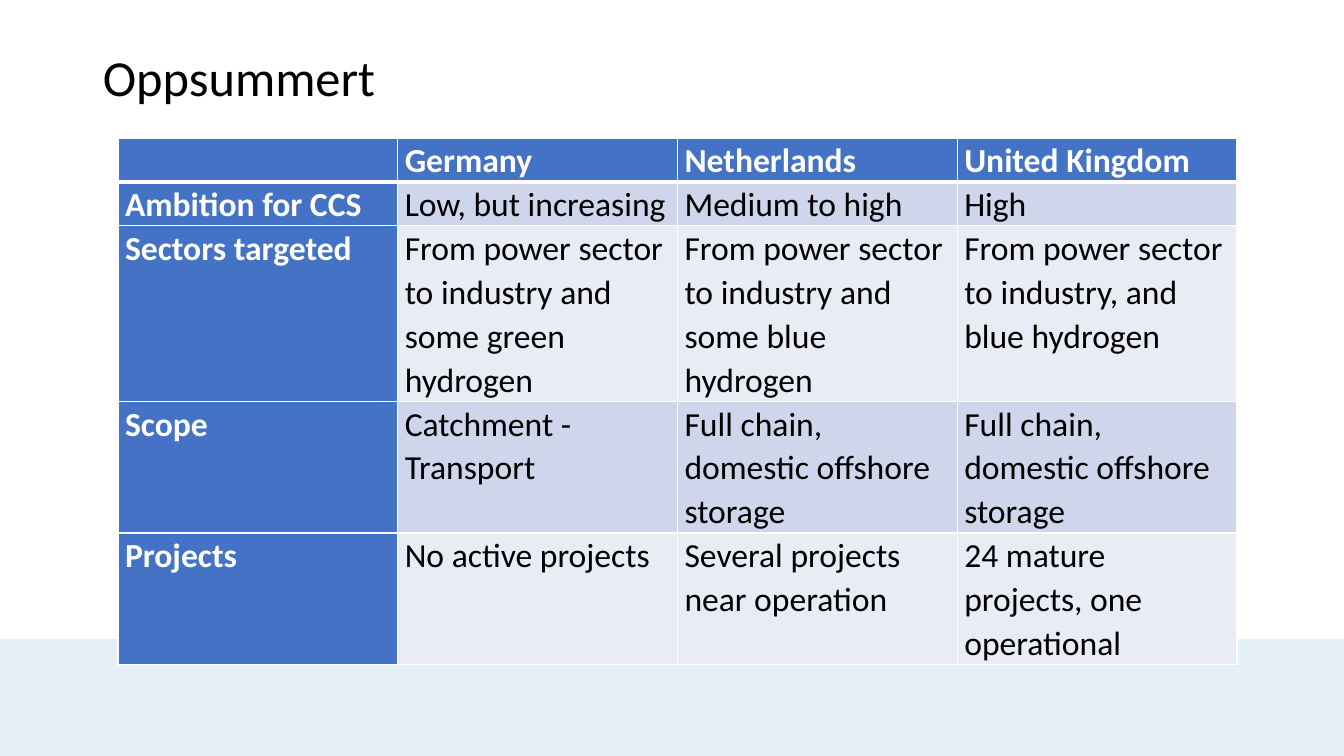
from dataclasses import dataclass

from lxml.etree import SubElement
from pptx import Presentation
from pptx.dml.color import RGBColor
from pptx.enum.shapes import MSO_SHAPE
from pptx.enum.text import MSO_ANCHOR, PP_ALIGN
from pptx.oxml.ns import qn
from pptx.util import Inches, Pt


@dataclass(frozen=True)
class Theme:
    font: str = "Calibri"
    title_size: int = 36
    table_size: int = 24
    text: str = "000000"
    white: str = "FFFFFF"
    heading: str = "4472C4"
    bands: tuple = ("E9EBF5", "CFD5EA")
    footer: str = "E6F1F7"
    thin_rule: int = 1
    header_rule: int = 3


SUMMARY = [
    ["", "Germany", "Netherlands", "United Kingdom"],
    ["Ambition for CCS", "Low, but increasing", "Medium to high", "High"],
    ["Sectors targeted",
     "From power sector to industry and some green hydrogen",
     "From power sector to industry and some blue hydrogen",
     "From power sector to industry, and blue hydrogen"],
    ["Scope", "Catchment - Transport",
     "Full chain, domestic offshore storage",
     "Full chain, domestic offshore storage"],
    ["Projects", "No active projects", "Several projects near operation",
     "24 mature projects, one operational"],
]
LINES_PER_ROW = [1, 1, 4, 3, 3]
LINE_HEIGHT = 0.435


class SlideBuilder:
    def __init__(self, slide, theme):
        self.slide = slide
        self.theme = theme

    def style(self, paragraph, size, color, bold=False):
        font = paragraph.font
        font.name = self.theme.font
        font.size = Pt(size)
        font.bold = bold
        font.color.rgb = RGBColor.from_string(color)

    def footer_band(self, left, top, width, height):
        """Draw the pale strip behind everything else."""
        band = self.slide.shapes.add_shape(
            MSO_SHAPE.RECTANGLE, *map(Inches, (left, top, width, height)))
        band.shadow.inherit = False
        band.fill.solid()
        band.fill.fore_color.rgb = RGBColor.from_string(self.theme.footer)
        band.line.fill.background()
        self.slide.shapes.title.element.addprevious(band.element)

    def title(self, wording, left, top, width, height):
        title = self.slide.shapes.title
        title.left, title.top = Inches(left), Inches(top)
        title.width, title.height = Inches(width), Inches(height)
        title.text_frame.text = wording
        title.text_frame.vertical_anchor = MSO_ANCHOR.MIDDLE
        heading = title.text_frame.paragraphs[0]
        heading.alignment = PP_ALIGN.LEFT
        heading.line_spacing = 0.9
        self.style(heading, self.theme.title_size, self.theme.text)

    def table(self, rows, row_heights, left, top, width):
        table = self.slide.shapes.add_table(
            len(rows), len(rows[0]), Inches(left), Inches(top),
            Inches(width), Inches(sum(row_heights))).table
        table.first_col = True
        for row, height in zip(table.rows, row_heights):
            row.height = Inches(height)
        for r, row in enumerate(rows):
            for c, wording in enumerate(row):
                self.cell(table.cell(r, c), wording, r, c)

    def cell(self, cell, wording, row, column):
        theme = self.theme
        is_heading = row == 0 or column == 0
        self.borders(cell, row)
        cell.fill.solid()
        cell.fill.fore_color.rgb = RGBColor.from_string(
            theme.heading if is_heading else theme.bands[row % 2])
        cell.margin_left = cell.margin_right = Inches(0.07)
        cell.margin_top = cell.margin_bottom = 0
        cell.text = wording
        entry = cell.text_frame.paragraphs[0]
        entry.line_spacing = 1.07
        entry.space_after = Pt(8)
        self.style(entry, theme.table_size,
                   theme.white if is_heading else theme.text, is_heading)

    def borders(self, cell, row):
        """Rule all four sides, heavier between the header and the body."""
        heavy_side = {0: "lnB", 1: "lnT"}.get(row)
        properties = cell._tc.get_or_add_tcPr()
        for side in ("lnL", "lnR", "lnT", "lnB"):
            points = (self.theme.header_rule if side == heavy_side
                      else self.theme.thin_rule)
            rule = SubElement(properties, qn(f"a:{side}"), w=str(Pt(points)))
            fill = SubElement(rule, qn("a:solidFill"))
            SubElement(fill, qn("a:srgbClr"), val=self.theme.white)


def main():
    presentation = Presentation()
    presentation.slide_width = Inches(13.33)
    presentation.slide_height = Inches(7.5)
    title_only = presentation.slide_layouts[5]
    builder = SlideBuilder(presentation.slides.add_slide(title_only), Theme())

    builder.footer_band(0, 6.34, 13.33, 1.16)
    builder.title("Oppsummert", 0.92, 0.4, 11.5, 0.8)
    row_heights = [lines * LINE_HEIGHT for lines in LINES_PER_ROW]
    builder.table(SUMMARY, row_heights, 1.17, 1.37, 11.1)
    presentation.save("out.pptx")


if __name__ == "__main__":
    main()
